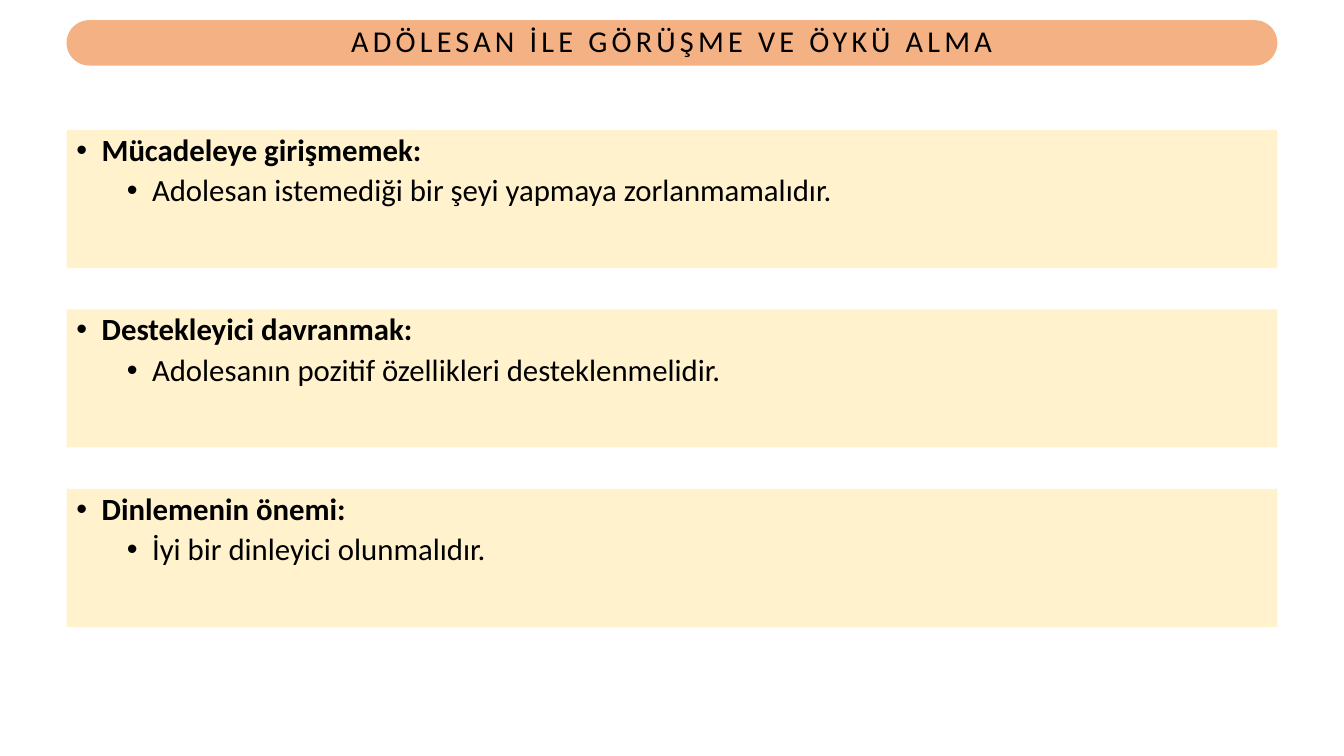
from lxml import etree
from pptx import Presentation
from pptx.dml.color import RGBColor
from pptx.enum.shapes import MSO_SHAPE
from pptx.enum.text import MSO_ANCHOR, MSO_AUTO_SIZE, PP_ALIGN
from pptx.oxml.ns import qn
from pptx.util import Inches, Pt

PILL, BAND = MSO_SHAPE.ROUNDED_RECTANGLE, MSO_SHAPE.RECTANGLE
TOP, MIDDLE = MSO_ANCHOR.TOP, MSO_ANCHOR.MIDDLE
LEFT, CENTER = PP_ALIGN.LEFT, PP_ALIGN.CENTER
NO_AUTOFIT = MSO_AUTO_SIZE.NONE
TITLE_ONLY = 5

COLORS = {"pill": "F4B183", "band": "FFF2CC", "text": "000000"}
FONT = "Calibri"
MARGIN, WIDTH = 0.66, 12.01
FIRST_TOP, BAND_HEIGHT, BAND_STEP = 1.29, 1.37, 1.78

HEADING = "ADÖLESAN İLE GÖRÜŞME VE ÖYKÜ ALMA"
PRINCIPLES = [
    ("Mücadeleye girişmemek:", "Adolesan istemediği bir şeyi yapmaya zorlanmamalıdır."),
    ("Destekleyici davranmak:", "Adolesanın pozitif özellikleri desteklenmelidir."),
    ("Dinlemenin önemi:", "İyi bir dinleyici olunmalıdır."),
]


def add_panel(slide, kind, box, color):
    panel = slide.shapes.add_shape(kind, *(Inches(length) for length in box))
    panel.shadow.inherit = False
    panel.fill.solid()
    panel.fill.fore_color.rgb = RGBColor.from_string(COLORS[color])
    panel.line.fill.background()
    return panel


def style_text(paragraph, size, bold, alignment):
    paragraph.alignment = alignment
    paragraph.line_spacing = 0.9
    for run in paragraph.runs:
        run.font.name = FONT
        run.font.size = Pt(size)
        run.font.bold = bold
        run.font.color.rgb = RGBColor.from_string(COLORS["text"])


def add_bullet(paragraph, level):
    paragraph.level = level
    properties = paragraph._p.get_or_add_pPr()
    properties.set("marL", str(Inches(0.25 + 0.5 * level)))
    properties.set("indent", str(Inches(-0.25)))
    etree.SubElement(properties, qn("a:buFont"), typeface="Arial")
    etree.SubElement(properties, qn("a:buChar"), char="•")


def build_heading(slide, box):
    pill = add_panel(slide, PILL, box, "pill")
    pill.adjustments[0] = 0.5
    title = slide.shapes.title
    title._element.addprevious(pill._element)
    title.left, title.top, title.width, title.height = (Inches(length) for length in box)
    frame = title.text_frame
    frame.text = HEADING
    frame.word_wrap = True
    frame.auto_size = NO_AUTOFIT
    frame.vertical_anchor = MIDDLE
    style_text(frame.paragraphs[0], 21.6, False, CENTER)
    for run in frame.paragraphs[0].runs:
        run.font._element.set("spc", "300")


def build_principle(slide, box, name, advice):
    frame = add_panel(slide, BAND, box, "band").text_frame
    frame.word_wrap = True
    frame.vertical_anchor = TOP
    frame.text = f"{name}\n{advice}"
    for level, paragraph in enumerate(frame.paragraphs):
        add_bullet(paragraph, level)
        style_text(paragraph, 22, level == 0, LEFT)
    frame.paragraphs[1].space_before = Pt(5)


def main():
    presentation = Presentation()
    presentation.slide_width = Inches(13.33)
    presentation.slide_height = Inches(7.5)
    slide = presentation.slides.add_slide(presentation.slide_layouts[TITLE_ONLY])
    build_heading(slide, (MARGIN, 0.2, WIDTH, 0.45))
    for index, (name, advice) in enumerate(PRINCIPLES):
        top = FIRST_TOP + index * BAND_STEP
        build_principle(slide, (MARGIN, top, WIDTH, BAND_HEIGHT), name, advice)
    presentation.save("out.pptx")


if __name__ == "__main__":
    main()
